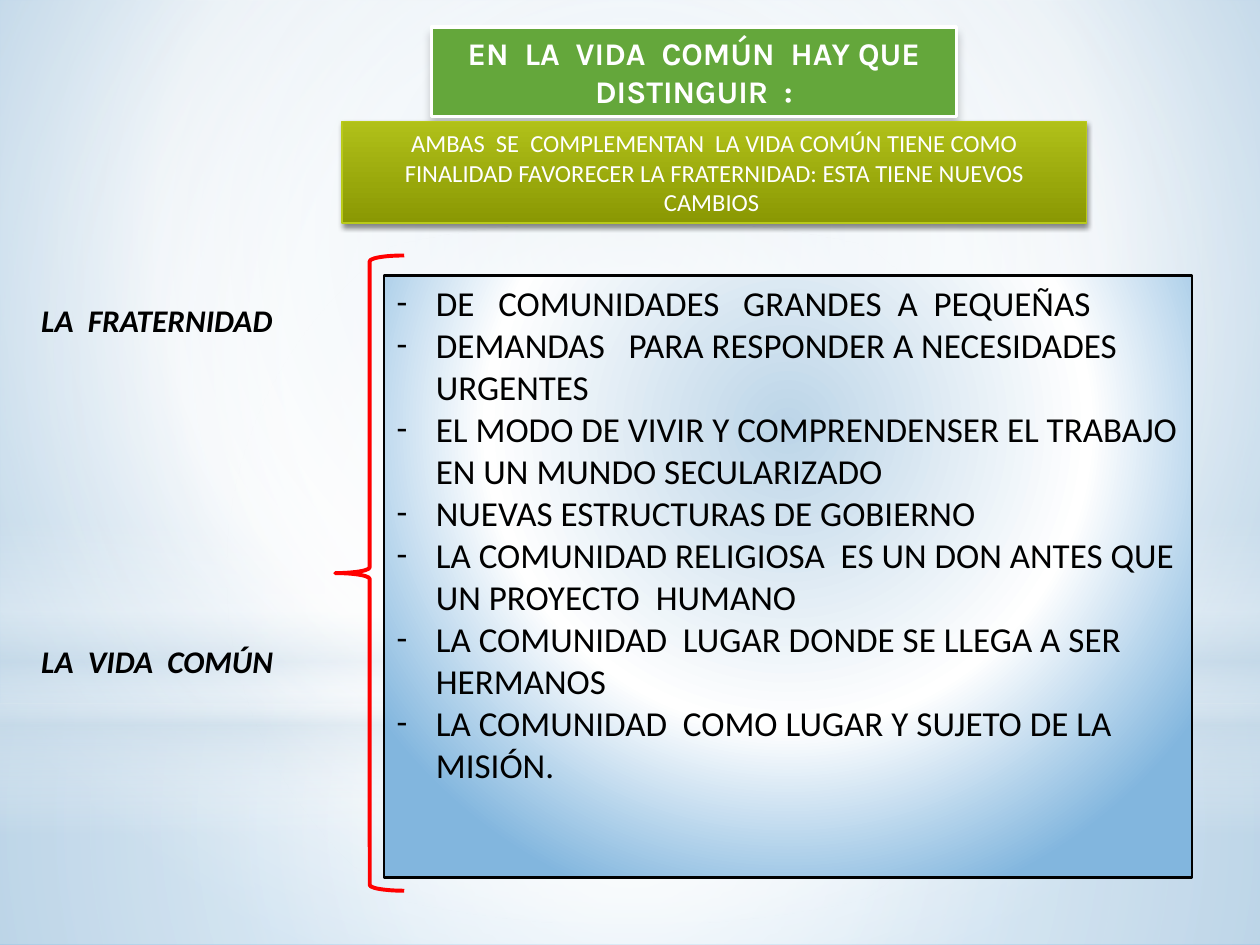
from lxml.etree import SubElement as Sub
from pptx import Presentation
from pptx.dml.color import RGBColor
from pptx.enum.shapes import MSO_SHAPE as Kind
from pptx.enum.text import MSO_ANCHOR as Anchor, PP_ALIGN as Align
from pptx.oxml.ns import qn
from pptx.util import Pt

WIDTH, HEIGHT = 720, 540
CENTRE = (50, 50, 50, 50)
GLOW = [(0, "BCD5E8"), (60, "FFFFFF"), (100, "82B6DE")]
GLOW_AT = (20, 10, 20, 60)
POINTS = [
    "DE   COMUNIDADES   GRANDES  A  PEQUEÑAS",
    "DEMANDAS   PARA RESPONDER A NECESIDADES URGENTES",
    "EL MODO DE VIVIR Y COMPRENDENSER EL TRABAJO EN UN MUNDO SECULARIZADO",
    "NUEVAS ESTRUCTURAS DE GOBIERNO",
    "LA COMUNIDAD RELIGIOSA  ES UN DON ANTES QUE UN PROYECTO  HUMANO",
    "LA COMUNIDAD  LUGAR DONDE SE LLEGA A SER HERMANOS",
    "LA COMUNIDAD  COMO LUGAR Y SUJETO DE LA MISIÓN.",
]


def color(code):
    return RGBColor.from_string(code)


def tint(node, code, alpha=100):
    """Add a colour with its opacity in percent."""
    clr = Sub(node, qn("a:srgbClr"), val=code)
    if alpha < 100:
        Sub(clr, qn("a:alpha"), val=str(alpha * 1000))


def blend(fill, props, stops, focus=None):
    """Fill with a gradient: round about focus, or downward without one."""
    fill.solid()
    solid = props.find(qn("a:solidFill"))
    grad = solid.makeelement(qn("a:gradFill"), {"rotWithShape": "1"})
    props.replace(solid, grad)
    row = Sub(grad, qn("a:gsLst"))
    for pos, *paint in stops:
        tint(Sub(row, qn("a:gs"), pos=str(pos * 1000)), *paint)
    if focus:
        ring = Sub(grad, qn("a:path"), path="circle")
        sides = {side: str(part * 1000) for side, part in zip("ltrb", focus)}
        Sub(ring, qn("a:fillToRect"), **sides)
    else:
        Sub(grad, qn("a:lin"), ang="5400000", scaled="0")


class Deck:
    font = "Calibri"
    ink = "000000"

    def __init__(self):
        self.file = Presentation()
        self.file.slide_width, self.file.slide_height = Pt(WIDTH), Pt(HEIGHT)
        self.slide = self.file.slides.add_slide(self.file.slide_layouts[6])

    def back(self, stops, focus):
        fill = self.slide.background.fill
        fill.solid()
        props = self.slide.element.find(".//" + qn("p:bgPr"))
        blend(fill, props, stops, focus)

    def shape(self, box, kind=Kind.RECTANGLE, fill=None, stops=None,
              focus=None, line=None, width=1):
        item = self.slide.shapes.add_shape(kind, *map(Pt, box))
        item.shadow.inherit = False
        if stops:
            blend(item.fill, item.element.spPr, stops, focus)
        elif fill:
            item.fill.solid()
            item.fill.fore_color.rgb = color(fill)
        else:
            item.fill.background()
        if line:
            item.line.color.rgb = color(line)
            item.line.width = Pt(width)
        else:
            item.line.fill.background()
        return item

    def shade(self, item, alpha, blur, dist):
        """Cast a black shadow straight down."""
        glow = item.element.spPr.find(qn("a:effectLst"))
        cast = Sub(glow, qn("a:outerShdw"), blurRad=str(Pt(blur)),
                   dist=str(Pt(dist)), dir="5400000", rotWithShape="0")
        tint(cast, "000000", alpha)

    def text(self, item, lines, size, ink=None, font=None, bold=False,
             slant=False, align=Align.LEFT, anchor=Anchor.TOP, gap=0,
             dash=False):
        frame = item.text_frame
        frame.word_wrap = True
        frame.vertical_anchor = anchor
        for i, line in enumerate(lines):
            para = frame.add_paragraph() if i else frame.paragraphs[0]
            para.alignment = align
            if i and gap:
                para.space_before = Pt(gap)
            if dash:
                props = para._p.get_or_add_pPr()
                props.set("marL", str(Pt(22.5)))
                props.set("indent", str(Pt(-22.5)))
                Sub(props, qn("a:buFont"), typeface=self.font)
                Sub(props, qn("a:buChar"), char="-")
            run = para.add_run()
            run.text = line
            face = run.font
            face.name, face.size = font or self.font, Pt(size)
            face.bold, face.italic = bold, slant
            face.color.rgb = color(ink or self.ink)

    def label(self, box, lines, size, **style):
        self.text(self.slide.shapes.add_textbox(*map(Pt, box)),
                  lines, size, **style)


def main():
    deck = Deck()
    deck.back(GLOW, GLOW_AT)

    # Soft light over the background
    split = 402
    deck.shape((0, split, WIDTH, HEIGHT - split), focus=CENTRE, stops=[
        (0, "FFFFFF", 91), (37, "FFFFFF", 76), (100, "CCDDEA", 79)])
    deck.shape((0, 0, WIDTH, split), focus=CENTRE, stops=[
        (0, "FFFFFF", 89), (48, "FFFFFF", 62), (100, "CCDDEA", 79)])
    deck.shape((0, 297, WIDTH, 180), stops=[
        (0, "FFFFFF", 0), (29, "FFFFFF", 30), (45, "CCDDEA", 40),
        (55, "FFFFFF", 26), (65, "CCDDEA", 60), (100, "FFFFFF", 0)])
    deck.shape((0, 126, WIDTH, split), Kind.OVAL, focus=CENTRE,
               stops=[(0, "FFFFFF"), (56, "FFFFFF", 0)])

    head = dict(ink="FFFFFF", align=Align.CENTER, anchor=Anchor.MIDDLE)
    title = deck.shape((246.5, 15.5, 300, 51), fill="64A73B",
                       line="FFFFFF", width=2)
    deck.shade(title, 20, 5, 4)
    deck.text(title, ["EN  LA  VIDA  COMÚN  HAY QUE DISTINGUIR  :"], 18,
              font="Karla", bold=True, **head)

    deck.label((16.5, 168.5, 160.5, 269),
               ["LA  FRATERNIDAD", "LA  VIDA  COMÚN"], 18,
               bold=True, slant=True, gap=173)
    deck.shape((191.5, 146, 39.5, 363), Kind.LEFT_BRACE,
               line="FF0000", width=2.25)

    note = deck.shape((195.5, 69.5, 425.5, 58), line="B9CA1A", width=0.75,
                      stops=[(0, "B0C019"), (100, "8A9803")])
    deck.shade(note, 45, 3.1, 1.8)
    deck.text(note, ["AMBAS  SE  COMPLEMENTAN  LA VIDA COMÚN TIENE COMO "
                     "FINALIDAD FAVORECER LA FRATERNIDAD: ESTA TIENE "
                     "NUEVOS CAMBIOS "], 14, **head)

    panel = deck.shape((219.5, 157.5, 461.5, 344), stops=GLOW,
                       focus=GLOW_AT, line="000000", width=1.25)
    deck.text(panel, POINTS, 20, dash=True)

    deck.file.save("out.pptx")


if __name__ == "__main__":
    main()
